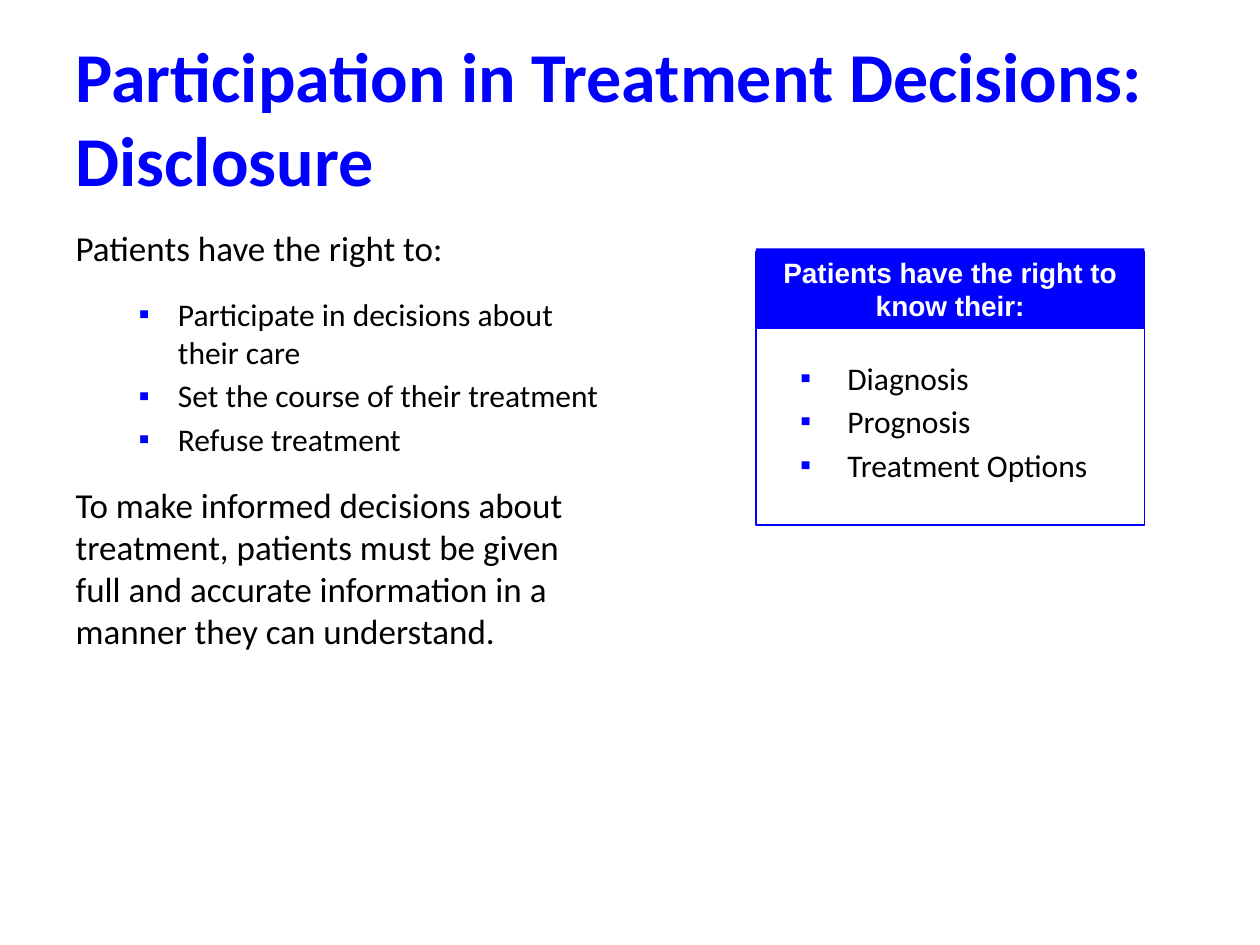
from dataclasses import dataclass

from lxml.etree import SubElement
from pptx import Presentation
from pptx.dml.color import RGBColor
from pptx.enum.shapes import MSO_SHAPE
from pptx.enum.text import MSO_ANCHOR, MSO_AUTO_SIZE, PP_ALIGN
from pptx.oxml.ns import qn
from pptx.util import Pt


@dataclass(frozen=True)
class Theme:
    accent: RGBColor = RGBColor(0, 0, 255)
    text: RGBColor = RGBColor(0, 0, 0)
    paper: RGBColor = RGBColor(255, 255, 255)
    font: str = "Calibri"
    header_font: str = "Arial"
    title: int = 40
    body: int = 20
    item: int = 18
    header: int = 16


THEME = Theme()
BULLET = "▪"

TITLE = "Participation in Treatment Decisions: Disclosure"
INTRO = "Patients have the right to:"
RIGHTS = [
    "Participate in decisions about their care",
    "Set the course of their treatment",
    "Refuse treatment",
]
CLOSING = (
    "To make informed decisions about treatment, patients must be given "
    "full and accurate information in a manner they can understand."
)
HEADER = "Patients have the right to know their:"
TOPICS = ["Diagnosis", "Prognosis", "Treatment Options"]


def place(s, box):
    s.left, s.top, s.width, s.height = (Pt(v) for v in box)


def frame(s, anchor=MSO_ANCHOR.TOP, **margins):
    """Set up the text frame of a shape and return it."""
    tf = s.text_frame
    settings = dict(word_wrap=True, auto_size=MSO_AUTO_SIZE.NONE,
                    vertical_anchor=anchor)
    for name, value in (settings | margins).items():
        setattr(tf, name, value)
    return tf


def write(p, text, size, color=THEME.text, font=THEME.font, bold=False,
          align=PP_ALIGN.LEFT, before=0):
    p.alignment, p.space_before = align, Pt(before)
    r = p.add_run()
    r.text = text
    for name, value in dict(name=font, size=Pt(size), bold=bold).items():
        setattr(r.font, name, value)
    r.font.color.rgb = color


def set_bullet(p, left=0, hanging=0):
    """Give a paragraph a square bullet, or none when nothing hangs."""
    pPr = p._p.get_or_add_pPr()
    pPr.set("marL", str(Pt(left)))
    pPr.set("indent", str(-Pt(hanging)))
    if not hanging:
        SubElement(pPr, qn("a:buNone"))
        return
    color = SubElement(pPr, qn("a:buClr"))
    SubElement(color, qn("a:srgbClr"), val=str(THEME.accent))
    SubElement(pPr, qn("a:buFont"), typeface=THEME.header_font)
    SubElement(pPr, qn("a:buChar"), char=BULLET)


def add_items(tf, items, left, hanging, first_gap, level=0):
    """Fill the frame's last paragraph, then add one for each further item."""
    for i, text in enumerate(items):
        p = tf.add_paragraph() if i else tf.paragraphs[-1]
        p.level = level
        write(p, text, THEME.item, before=3.2 if i else first_gap)
        set_bullet(p, left, hanging)


def fill_title(s, box):
    place(s, box)
    tf = frame(s, MSO_ANCHOR.MIDDLE)
    write(tf.paragraphs[0], TITLE, THEME.title, THEME.accent, bold=True)


def fill_rights(s, box):
    place(s, box)
    tf = frame(s)
    section_gap = 15
    write(tf.paragraphs[0], INTRO, THEME.body)
    set_bullet(tf.paragraphs[0])
    tf.add_paragraph()
    add_items(tf, RIGHTS, 58.5, 22.5, section_gap, level=1)
    p = tf.add_paragraph()
    write(p, CLOSING, THEME.body, before=section_gap)
    set_bullet(p)


def fill_topics(slide, s, box):
    """Place the outlined topic list with its filled header."""
    x, y, w, h = box
    place(s, box)
    s.line.color.rgb = THEME.accent
    s.line.width = Pt(0.75)
    add_items(frame(s, margin_top=Pt(61)), TOPICS, 45, 27, 0, level=2)

    header = slide.shapes.add_shape(MSO_SHAPE.RECTANGLE, 0, 0, 0, 0)
    place(header, (x, y - 2, w, 46))
    header.shadow.inherit = False
    header.fill.solid()
    header.fill.fore_color.rgb = THEME.accent
    header.line.fill.background()
    tf = frame(header, MSO_ANCHOR.MIDDLE)
    write(tf.paragraphs[0], HEADER, THEME.header, THEME.paper,
          THEME.header_font, bold=True, align=PP_ALIGN.CENTER)


def main():
    prs = Presentation()
    prs.slide_width, prs.slide_height = Pt(720), Pt(540)
    two_content = prs.slide_layouts[3]
    slide = prs.slides.add_slide(two_content)
    slide.background.fill.solid()
    slide.background.fill.fore_color.rgb = THEME.paper
    title, rights, topics = list(slide.placeholders)[:3]
    fill_title(title, (36, 21.6, 648, 90))
    fill_rights(rights, (36, 126, 318, 356))
    fill_topics(slide, topics, (432, 144, 222, 156))
    prs.save("out.pptx")


if __name__ == "__main__":
    main()
